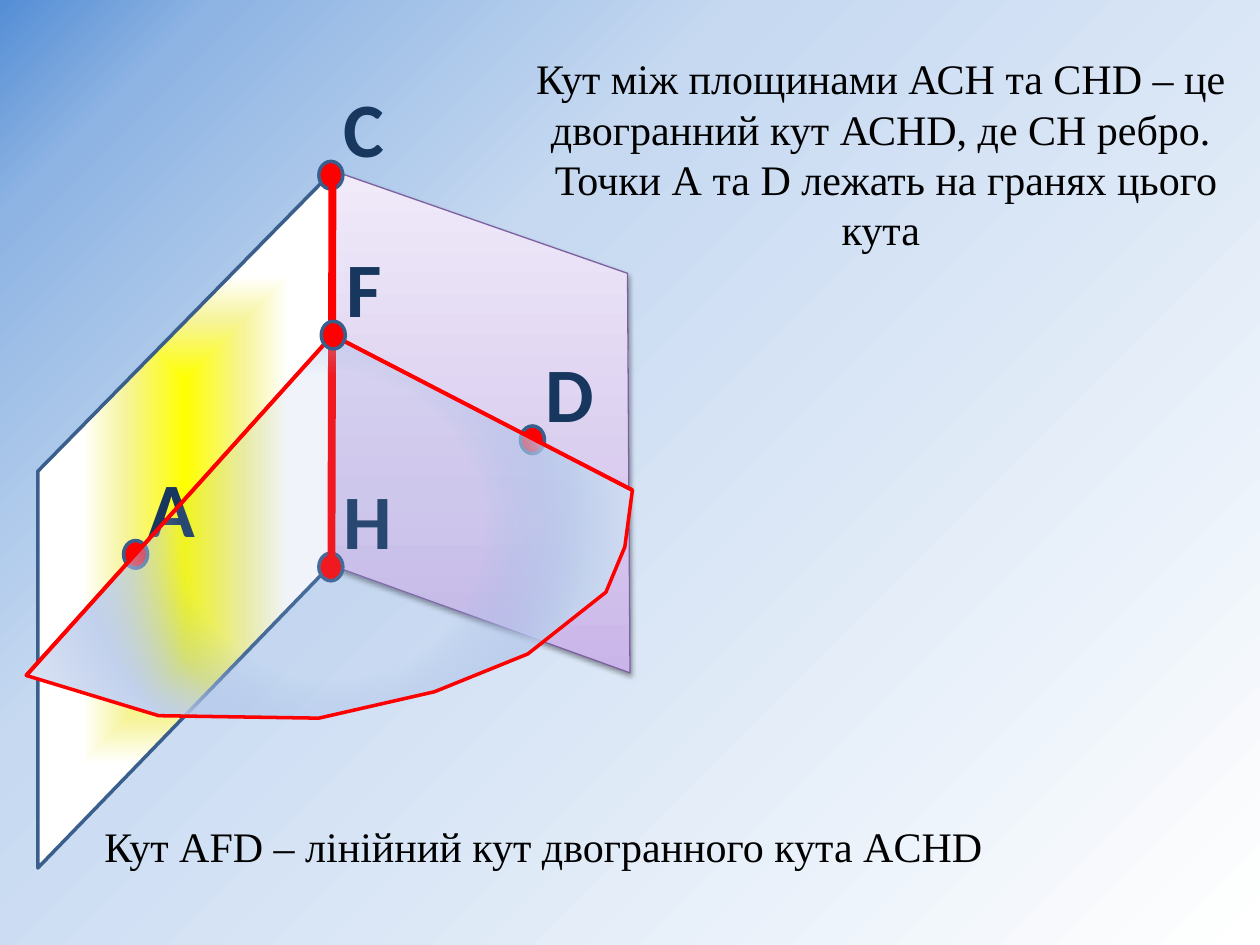
from lxml import etree
from pptx import Presentation
from pptx.dml.color import RGBColor
from pptx.enum.shapes import MSO_CONNECTOR, MSO_SHAPE
from pptx.enum.text import MSO_AUTO_SIZE, PP_ALIGN
from pptx.oxml.ns import qn
from pptx.util import Pt

STRAIGHT, OVAL = MSO_CONNECTOR.STRAIGHT, MSO_SHAPE.OVAL
LEFT, CENTER = PP_ALIGN.LEFT, PP_ALIGN.CENTER
FIT = MSO_AUTO_SIZE.SHAPE_TO_FIT_TEXT

BLACK = RGBColor(0x00, 0x00, 0x00)
RED = RGBColor(0xFF, 0x00, 0x00)
NAVY = RGBColor(0x17, 0x37, 0x5E)
STEEL = RGBColor(0x3A, 0x5F, 0x8C)
PURPLE = RGBColor(0x7D, 0x60, 0xA0)
WHITE = RGBColor(0xFF, 0xFF, 0xFF)

# Gradient stops: position in percent, colour, opacity in percent
SKY = [(0, RGBColor(0x55, 0x8E, 0xD5), 100), (10, RGBColor(0x8E, 0xB4, 0xE3), 100),
       (34, RGBColor(0xC6, 0xD9, 0xF1), 100), (100, WHITE, 100)]
YELLOW_GLOW = [(0, RGBColor(0xFF, 0xFF, 0x00), 100), (40, RGBColor(0xF6, 0xF4, 0x9A), 100),
               (70, WHITE, 100), (100, WHITE, 100)]
LILAC = [(0, RGBColor(0xC9, 0xB5, 0xE8), 100), (35, RGBColor(0xD8, 0xCB, 0xEE), 100),
         (100, RGBColor(0xF0, 0xEA, 0xF9), 100)]
GLASS = [(42, RGBColor(0x9A, 0xB5, 0xE4), 14), (71, RGBColor(0xC2, 0xD1, 0xED), 100),
         (100, RGBColor(0xE1, 0xE8, 0xF5), 100)]

MIDDLE = {"l": 50, "t": 50, "r": 50, "b": 50}
TOP_LEFT = {"r": 100, "b": 100}

# Points of the figure, relative to its top left corner
C, F, H = (175, 56), (175, 149.5), (174.4, 280.6)
LEFT_FACE = [C, (6.6, 227.3), (6.6, 454), (173.6, 281.3)]
RIGHT_FACE = [(176.5, 56), (343.6, 114.2), (345, 342.5), (175, 281.3)]
PLANE = [(0, 344), F, (346.4, 238.1), (342.1, 270.5), (331.3, 296.4),
         (286.7, 331.7), (233.4, 353.3), (167.2, 368.4), (75.7, 367)]


def sub(parent, tag, **attrs):
    return etree.SubElement(parent, qn(tag), {k: str(v) for k, v in attrs.items()})


def set_gradient(props, stops, path=None, focus=None, angle=0):
    """Swap the solid fill in props for a path gradient, or a linear one if path is None."""
    grad = etree.Element(qn("a:gradFill"), rotWithShape="1")
    stop_list = sub(grad, "a:gsLst")
    for pos, color, opacity in stops:
        clr = sub(sub(stop_list, "a:gs", pos=pos * 1000), "a:srgbClr", val=color)
        if opacity < 100:
            sub(clr, "a:alpha", val=opacity * 1000)
    if path:
        rect = {side: pct * 1000 for side, pct in focus.items()}
        sub(sub(grad, "a:path", path=path), "a:fillToRect", **rect)
    else:
        sub(grad, "a:lin", ang=angle * 60000, scaled=0)
    props.replace(props.find(qn("a:solidFill")), grad)


def add_text(s, text, x, y, w, h, size=24, font="Times New Roman", color=BLACK,
             bold=False, align=LEFT, wrap=True):
    tf = s.shapes.add_textbox(Pt(x), Pt(y), Pt(w), Pt(h)).text_frame
    tf.word_wrap = wrap
    tf.auto_size = FIT
    for i, line in enumerate(text.split("\n")):
        p = tf.paragraphs[0] if i == 0 else tf.add_paragraph()
        p.alignment = align
        r = p.add_run()
        r.text = line
        r.font.size, r.font.name, r.font.bold = Pt(size), font, bold
        r.font.color.rgb = color


def set_outline(sp, color, width):
    sp.line.color.rgb = color
    sp.line.width = Pt(width)


def add_face(s, x, y, points, stops, color, width, **gradient):
    pts = [(Pt(x + px), Pt(y + py)) for px, py in points]
    builder = s.shapes.build_freeform(*pts[0], scale=1.0)
    builder.add_line_segments(pts[1:], close=True)
    sp = builder.convert_to_shape()
    sp.shadow.inherit = False
    sp.fill.solid()
    set_gradient(sp.element.spPr, stops, **gradient)
    set_outline(sp, color, width)
    return sp


def add_line(s, x, y, start, end, width):
    line = s.shapes.add_connector(STRAIGHT, Pt(x + start[0]), Pt(y + start[1]),
                                  Pt(x + end[0]), Pt(y + end[1]))
    set_outline(line, RED, width)
    sub(line.element.spPr, "a:effectLst")


def add_vertex(s, letter, x, y, label_width):
    """Place a red dot at x, y and its letter above and to the right."""
    dot = s.shapes.add_shape(OVAL, Pt(x), Pt(y), Pt(13.7), Pt(15.8))
    dot.shadow.inherit = False
    dot.fill.solid()
    dot.fill.fore_color.rgb = RED
    set_outline(dot, STEEL, 2)
    add_text(s, letter, x + 7.2, y - 49.5, label_width, 60.5, size=44,
             font="Calibri", color=NAVY, bold=True, wrap=False)


def add_shadow(sp):
    effects = sp.element.spPr.find(qn("a:effectLst"))
    shadow = sub(effects, "a:outerShdw", blurRad=Pt(3.1), dist=Pt(1.6),
                 dir=90 * 60000, rotWithShape=0)
    sub(sub(shadow, "a:srgbClr", val=BLACK), "a:alpha", val=38000)


def add_dihedral_angle(s, x, y):
    add_face(s, x, y, LEFT_FACE, YELLOW_GLOW, STEEL, 2, path="shape", focus=MIDDLE)
    add_shadow(add_face(s, x, y, RIGHT_FACE, LILAC, PURPLE, 0.75, angle=270))
    for letter, dx, dy, width in [("A", 55.6, 266.9, 41.8), ("D", 282.4, 201.4, 42.5),
                                  ("C", 167.2, 50.2, 38.2), ("H", 167.2, 274.1, 42.5)]:
        add_vertex(s, letter, x + dx, y + dy, width)
    add_line(s, x, y, C, H, 4.5)
    add_face(s, x, y, PLANE, GLASS, RED, 2, path="circle", focus=MIDDLE)
    for end in (PLANE[2], PLANE[0]):
        add_line(s, x, y, F, end, 2.25)
    add_vertex(s, "F", x + 168.6, y + 141.6, 35.3)


def add_background(s):
    s.background.fill.solid()
    set_gradient(s.element.find(".//" + qn("p:bgPr")), SKY, path="circle", focus=TOP_LEFT)


def main():
    prs = Presentation()
    prs.slide_width, prs.slide_height = Pt(720), Pt(540)
    s = prs.slides.add_slide(prs.slide_layouts[6])
    add_background(s)
    add_dihedral_angle(s, 15, 42)
    add_text(s, "Кут між площинами АСН та СНD – це двогранний кут АСНD, де СН ребро.\n"
                " Точки А та D лежать на гранях цього кута",
             286.6, 26.6, 433.4, 123.8, align=CENTER)
    add_text(s, "Кут AFD – лінійний кут двогранного кута АCHD", 52.6, 465.1, 653, 36)
    prs.save("out.pptx")


if __name__ == "__main__":
    main()
